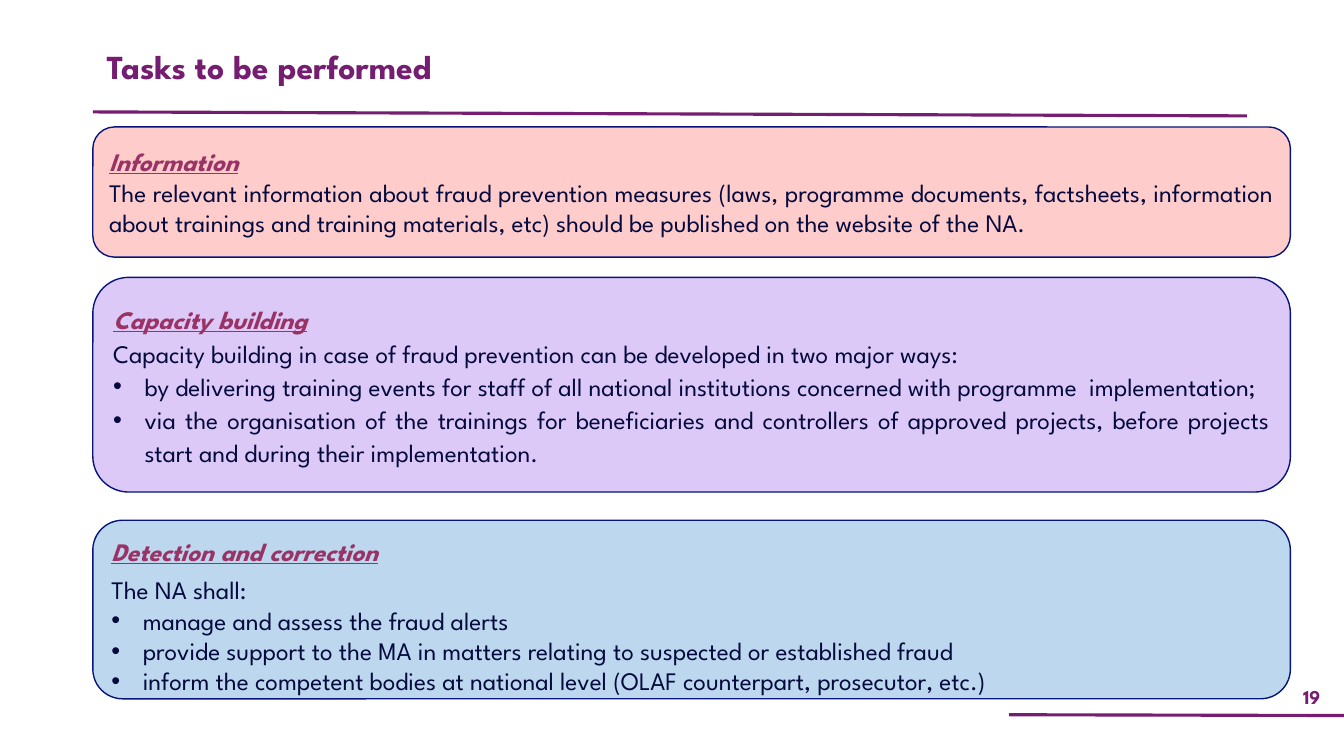
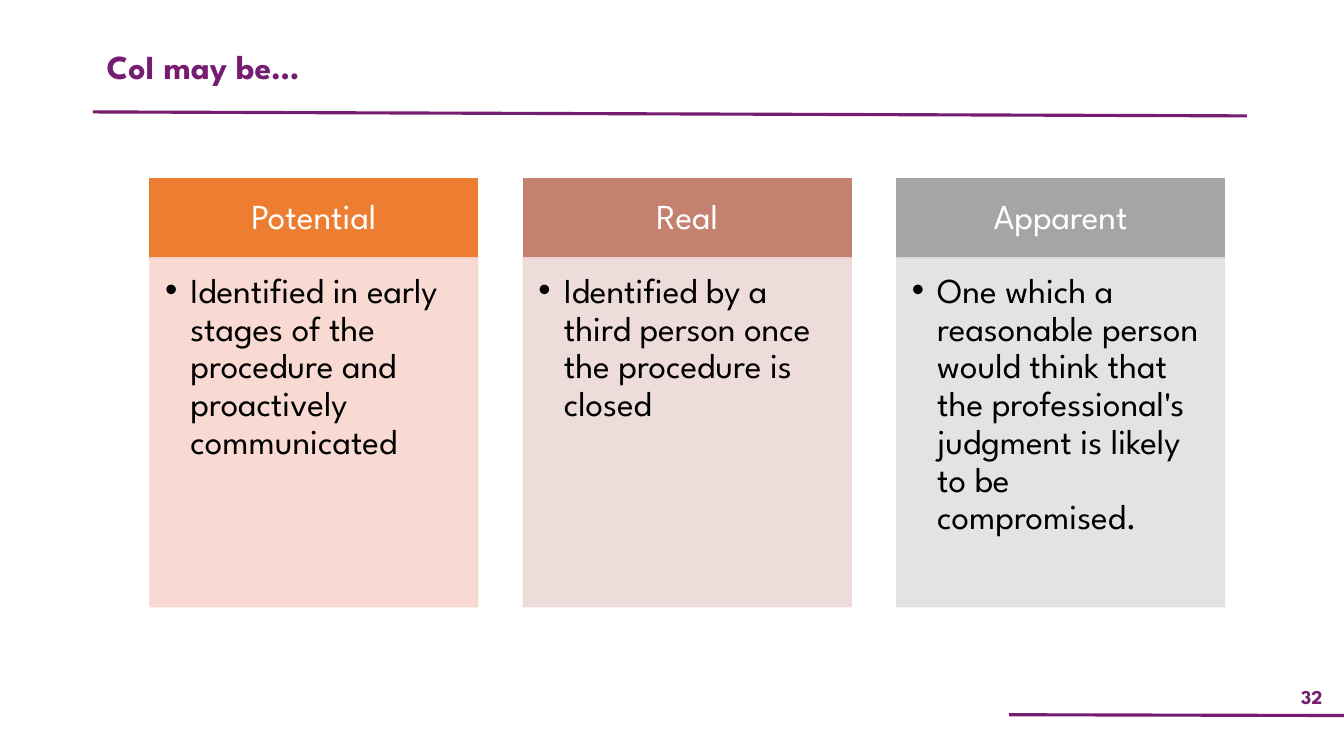
from lxml import etree
from pptx import Presentation
from pptx.dml.color import RGBColor
from pptx.enum.shapes import MSO_CONNECTOR, MSO_SHAPE
from pptx.enum.text import MSO_ANCHOR, MSO_AUTO_SIZE, PP_ALIGN
from pptx.oxml.ns import qn
from pptx.util import Cm, Pt

LEFT, CENTER, JUSTIFY = PP_ALIGN.LEFT, PP_ALIGN.CENTER, PP_ALIGN.JUSTIFY
TOP, MIDDLE = MSO_ANCHOR.TOP, MSO_ANCHOR.MIDDLE
RECT, ROUNDED = MSO_SHAPE.RECTANGLE, MSO_SHAPE.ROUNDED_RECTANGLE
STRAIGHT = MSO_CONNECTOR.STRAIGHT
NO_AUTOFIT = MSO_AUTO_SIZE.NONE

FONT = "League Spartan"
COLORS = {
    "plum": "751D70", "heading": "993366", "ink": "040A3D", "outline": "07147A",
    "white": "FFFFFF", "black": "000000",
    "pink": "FFCCCC", "lilac": "DDC9F7", "sky": "BDD7EE",
    "orange": "ED7D31", "orange tint": "F8D7CE",
    "clay": "C48170", "clay tint": "EDD9D7",
    "grey": "A5A5A5", "grey tint": "E1E1E1",
}

FONTS = {
    "title": {"size": Pt(24), "bold": True, "color": "plum"},
    "number": {"size": Pt(14), "bold": True, "color": "plum"},
    "heading": {"size": Pt(18), "bold": True, "italic": True, "underline": True, "color": "heading"},
    "text": {"size": Pt(18), "color": "ink"},
    "bullet": {"size": Pt(18), "color": "ink", "hang": Cm(0.79)},
    "column head": {"size": Pt(25), "color": "white"},
    "column body": {"size": Pt(25), "color": "black", "hang": Cm(0.64)},
}

TASKS = {
    "title": "Tasks to be performed",
    "number": "19",
    "boxes": [
        {"top": 3.2, "height": 3.28, "fill": "pink", "para": {"alignment": JUSTIFY}, "lines": [
            ("heading", "Information"),
            ("text", "The relevant information about fraud prevention measures (laws, programme "
                     "documents, factsheets, information about trainings and training materials, "
                     "etc) should be published on the website of the NA."),
        ]},
        {"top": 6.99, "height": 5.41, "fill": "lilac",
         "para": {"alignment": JUSTIFY, "line_spacing": 1.1}, "lines": [
            ("heading", "Capacity building"),
            ("text", "Capacity building in case of fraud prevention can be developed in two major ways:"),
            ("bullet", "by delivering training events for staff of all national institutions "
                       "concerned with programme  implementation;"),
            ("bullet", "via the organisation of the trainings for beneficiaries and controllers of "
                       "approved projects, before projects start and during their implementation."),
        ]},
        {"top": 13.11, "height": 4.5, "fill": "sky", "para": {"alignment": LEFT},
         "first": {"alignment": JUSTIFY, "line_spacing": 1.15, "space_after": Pt(6)},
         "margins": (0.25, 0.34, 0.25, 0.13), "lines": [
            ("heading", "Detection and correction"),
            ("text", "The NA shall:"),
            ("bullet", "manage and assess the fraud alerts"),
            ("bullet", "provide support to the MA in matters relating to suspected or established fraud"),
            ("bullet", "inform the competent bodies at national level (OLAF counterpart, prosecutor, etc.)"),
        ]},
    ],
}

CONFLICTS = {
    "title": "CoI may be…",
    "number": "32",
    "columns": [
        ("Potential", "orange",
         "Identified in early stages of the procedure and proactively communicated"),
        ("Real", "clay", "Identified by a third person once the procedure is closed"),
        ("Apparent", "grey",
         "One which a reasonable person would think that the professional's judgment "
         "is likely to be compromised."),
    ],
}

BOX_LEFT, BOX_WIDTH = 2.34, 30.18
COLUMN_LEFT, COLUMN_WIDTH, COLUMN_PITCH = 3.78, 8.26, 9.41
HEAD_TOP, HEAD_HEIGHT, BODY_HEIGHT = 4.5, 2.0, 8.79
RULES = [(2.34, 2.82, 31.42, 2.92), (25.43, 18.01, 33.87, 18.03)]
MARGINS = (0.25, 0.13, 0.25, 0.13)


def rgb(name):
    return RGBColor.from_string(COLORS[name])


def set_attrs(target, values):
    for name, value in values.items():
        setattr(target, name, value)


def add_bullet(p, hang):
    pPr = p._p.get_or_add_pPr()
    pPr.set("marL", str(hang))
    pPr.set("indent", str(-hang))
    etree.SubElement(pPr, qn("a:buFont")).set("typeface", "Arial")
    etree.SubElement(pPr, qn("a:buChar")).set("char", "•")


def write(shape, lines, para, anchor=MIDDLE, margins=MARGINS, first=None):
    tf = shape.text_frame
    set_attrs(tf, {"word_wrap": True, "auto_size": NO_AUTOFIT, "vertical_anchor": anchor})
    for side, margin in zip(("left", "top", "right", "bottom"), margins):
        setattr(tf, f"margin_{side}", Cm(margin))
    for i, (style, text) in enumerate(lines):
        p = tf.add_paragraph() if i else tf.paragraphs[0]
        values = dict(FONTS[style])
        color, hang = values.pop("color"), values.pop("hang", None)
        if hang:
            add_bullet(p, hang)
        set_attrs(p, first if first and i == 0 else para)
        r = p.add_run()
        r.text = text
        set_attrs(r.font, {"name": FONT, **values})
        r.font.color.rgb = rgb(color)


def add_box(s, kind, place, fill, line, alpha=None):
    sp = s.shapes.add_shape(kind, *map(Cm, place))
    sp.shadow.inherit = False
    sp.fill.solid()
    sp.fill.fore_color.rgb = rgb(fill)
    sp.line.color.rgb = rgb(line)
    sp.line.width = Pt(1)
    if alpha:
        for color in sp._element.spPr.iter(qn("a:srgbClr")):
            etree.SubElement(color, qn("a:alpha")).set("val", str(alpha * 1000))
    return sp


def add_slide(prs, content):
    s = prs.slides.add_slide(prs.slide_layouts[5])
    for ends in RULES:
        rule = s.shapes.add_connector(STRAIGHT, *map(Cm, ends))
        rule.line.color.rgb = rgb("plum")
        rule.line.width = Pt(2.25)
        etree.SubElement(rule._element.spPr, qn("a:effectLst"))
    number = s.shapes.add_textbox(Cm(32.26), Cm(17.09), Cm(1.6), Cm(0.91))
    write(number, [("number", content["number"])], {"alignment": CENTER})
    title = s.shapes.title
    set_attrs(title, {"left": Cm(2.44), "top": Cm(1.22), "width": Cm(24.71), "height": Cm(1.07)})
    write(title, [("title", content["title"])], {"alignment": JUSTIFY, "line_spacing": 0.8}, TOP)
    return s


def build_tasks(prs):
    s = add_slide(prs, TASKS)
    for box in TASKS["boxes"]:
        place = (BOX_LEFT, box["top"], BOX_WIDTH, box["height"])
        sp = add_box(s, ROUNDED, place, box["fill"], "outline")
        write(sp, box["lines"], box["para"], margins=box.get("margins", MARGINS),
              first=box.get("first"))


def build_conflicts(prs):
    s = add_slide(prs, CONFLICTS)
    for i, (name, color, text) in enumerate(CONFLICTS["columns"]):
        left = COLUMN_LEFT + i * COLUMN_PITCH
        tint = f"{color} tint"
        head = add_box(s, RECT, (left, HEAD_TOP, COLUMN_WIDTH, HEAD_HEIGHT), color, color)
        write(head, [("column head", name)], {"alignment": CENTER, "line_spacing": 0.9},
              margins=(0.48, 0.28, 0.48, 0.28))
        place = (left, HEAD_TOP + HEAD_HEIGHT, COLUMN_WIDTH, BODY_HEIGHT)
        body = add_box(s, RECT, place, tint, tint, alpha=90)
        write(body, [("column body", text)], {"alignment": LEFT, "line_spacing": 0.9},
              TOP, (0.38, 0.38, 0.48, 0.56))


def main():
    prs = Presentation()
    prs.slide_width, prs.slide_height = Cm(33.87), Cm(19.05)
    build_tasks(prs)
    build_conflicts(prs)
    prs.save("out.pptx")


if __name__ == "__main__":
    main()
